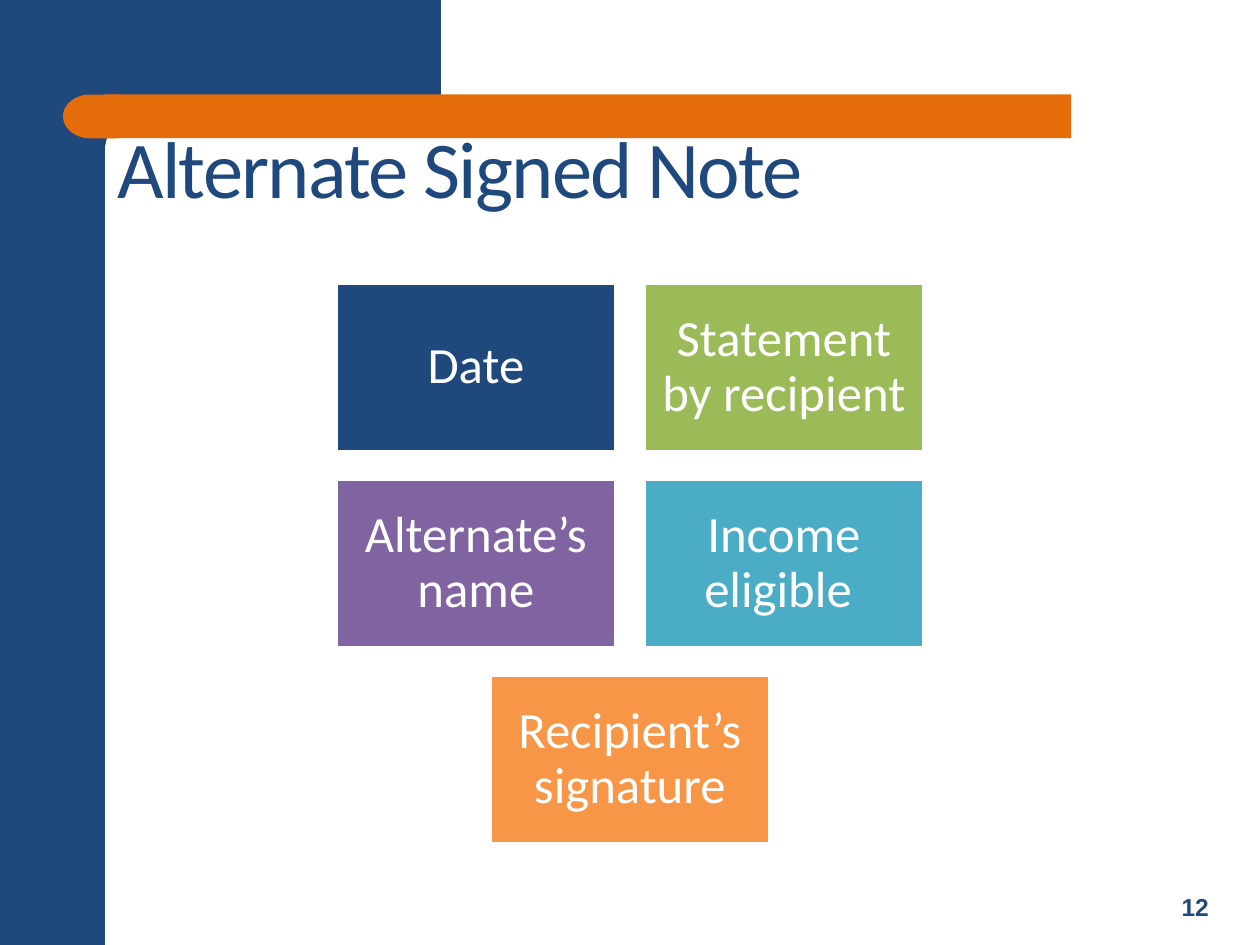
import pptx
import pptx.dml.color
import pptx.enum.shapes
import pptx.enum.text
import pptx.util

Pt = pptx.util.Pt
RGBColor = pptx.dml.color.RGBColor
Shape = pptx.enum.shapes.MSO_SHAPE
Anchor = pptx.enum.text.MSO_ANCHOR
Align = pptx.enum.text.PP_ALIGN

NAVY = RGBColor(0x1F, 0x49, 0x7D)
ORANGE = RGBColor(0xE4, 0x6C, 0x0A)
GREEN = RGBColor(0x9B, 0xBB, 0x59)
PURPLE = RGBColor(0x80, 0x64, 0xA2)
TEAL = RGBColor(0x4B, 0xAC, 0xC6)
AMBER = RGBColor(0xF7, 0x96, 0x46)
WHITE = RGBColor(0xFF, 0xFF, 0xFF)

TITLE = {"name": "Calibri", "size": Pt(46)}
NUMBER = {"name": "Arial", "size": Pt(14), "bold": True}
TILE = {"name": "Calibri", "size": Pt(29)}


class SlideBuilder:
    def __init__(self, page):
        self.page = page

    def paint(self, shape, fill):
        shape.shadow.inherit = False
        shape.fill.solid()
        shape.fill.fore_color.rgb = fill
        shape.line.fill.background()
        return shape

    def block(self, kind, bounds, fill):
        shape = self.page.shapes.add_shape(kind, *map(Pt, bounds))
        return self.paint(shape, fill)

    def outline(self, points, fill):
        builder = self.page.shapes.build_freeform(*points[0], scale=Pt(1))
        builder.add_line_segments(points[1:], close=True)
        return self.paint(builder.convert_to_shape(), fill)

    def fill_text(self, box, text, style, color, anchor, align):
        frame = box.text_frame
        frame.word_wrap = True
        frame.vertical_anchor = anchor
        para = frame.paragraphs[0]
        para.alignment = align
        span = para.add_run()
        span.text = text
        for name, value in style.items():
            setattr(span.font, name, value)
        span.font.color.rgb = color
        return span

    def text(self, bounds, text, style, anchor, align):
        box = self.page.shapes.add_textbox(*map(Pt, bounds))
        return self.fill_text(box, text, style, NAVY, anchor, align)

    def tile(self, bounds, text, fill):
        box = self.block(Shape.RECTANGLE, bounds, fill)
        box.line.color.rgb = WHITE
        box.line.width = Pt(2)
        for side in ("left", "top", "right", "bottom"):
            setattr(box.text_frame, f"margin_{side}", Pt(8.8))
        self.fill_text(box, text, TILE, WHITE, Anchor.MIDDLE, Align.CENTER)
        box.text_frame.paragraphs[0].line_spacing = 0.9


def main():
    deck = pptx.Presentation()
    deck.slide_width, deck.slide_height = Pt(720), Pt(540)
    slide = SlideBuilder(deck.slides.add_slide(deck.slide_layouts[6]))

    slide.block(Shape.RECTANGLE, (0, 0, 60, 540), NAVY)
    slide.outline(
        [(36, 0), (252, 0), (252, 60), (80, 60), (74, 61), (67, 66),
         (62, 75), (60, 84), (60, 92), (36, 92)],
        NAVY,
    )
    bar = slide.block(Shape.ROUNDED_RECTANGLE, (60, 54, 552, 25), ORANGE)
    bar.adjustments[0] = 0
    cap = slide.block(Shape.FLOWCHART_DELAY, (36, 54, 31, 25), ORANGE)
    cap.rotation = 180

    slide.text((660, 492, 46, 38), "12", NUMBER, Anchor.BOTTOM, Align.CENTER)
    title = slide.text((60, 64, 600, 72), "Alternate Signed Note", TITLE,
                       Anchor.TOP, Align.LEFT)
    title.font._element.set("spc", "-100")

    rows = [
        [("Date", NAVY), ("Statement by recipient", GREEN)],
        [("Alternate’s name", PURPLE), ("Income eligible ", TEAL)],
        [("Recipient’s signature", AMBER)],
    ]
    width, height, gap, center, top = 160, 96, 16, 360, 162
    for row_index, row in enumerate(rows):
        left = center - (len(row) * (width + gap) - gap) / 2
        for column, (label, fill) in enumerate(row):
            bounds = (left + column * (width + gap),
                      top + row_index * (height + gap), width, height)
            slide.tile(bounds, label, fill)

    deck.save("out.pptx")


if __name__ == "__main__":
    main()
